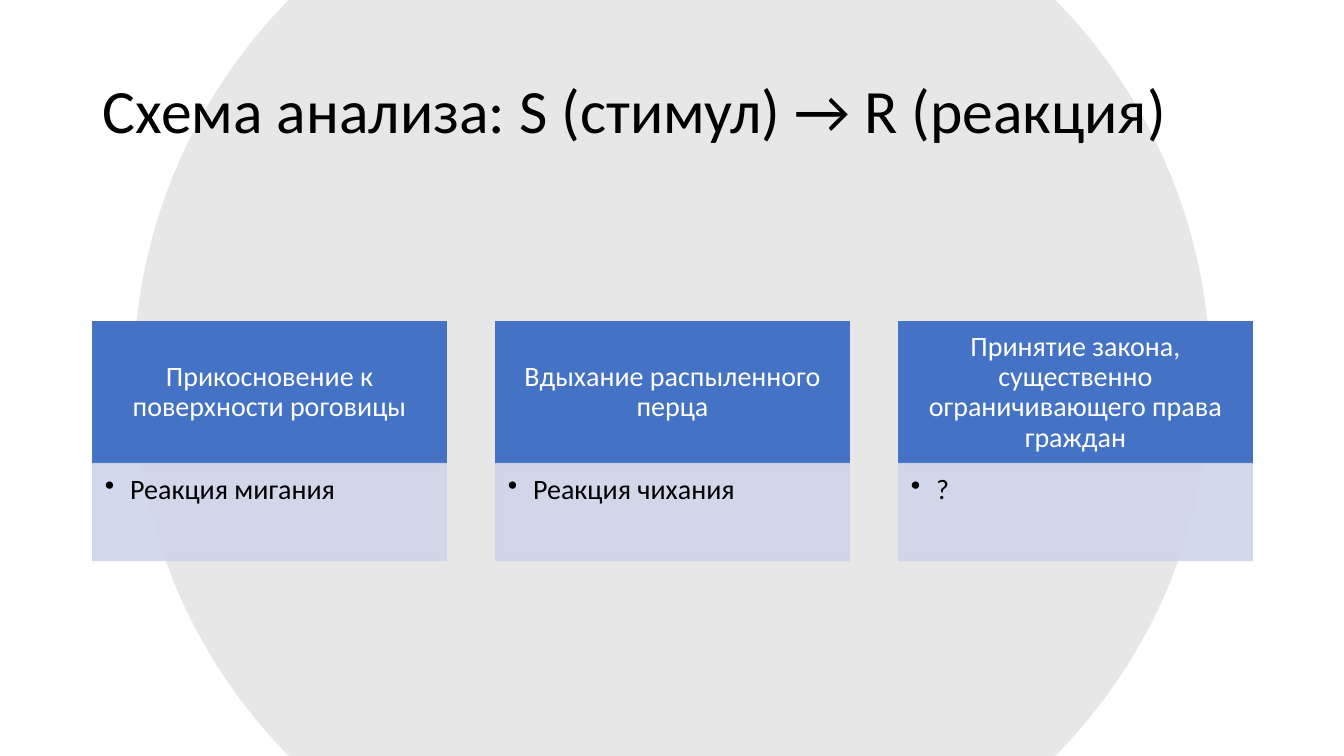
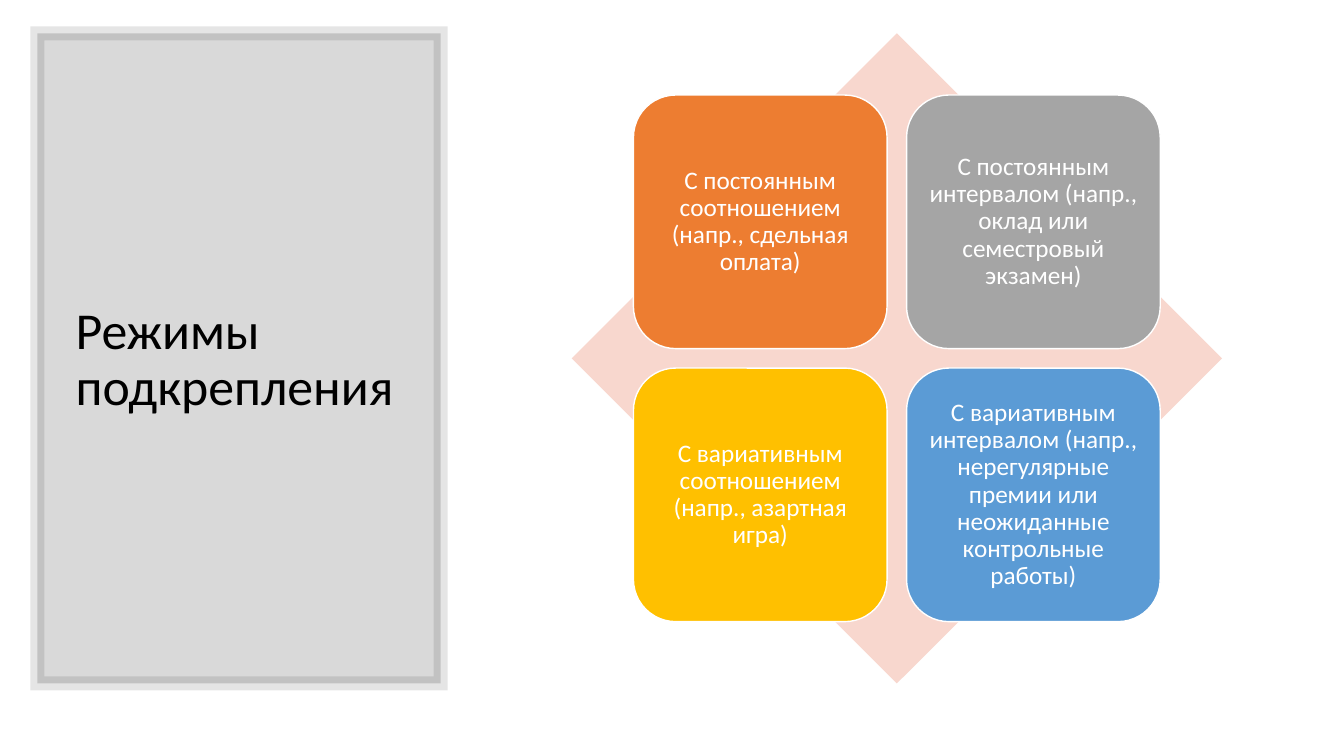
import math
from collections import namedtuple

from lxml import etree
from pptx import Presentation
from pptx.dml.color import RGBColor
from pptx.enum.shapes import MSO_SHAPE
from pptx.enum.text import MSO_ANCHOR, MSO_AUTO_SIZE, PP_ALIGN
from pptx.oxml.ns import qn
from pptx.util import Inches, Pt

RECTANGLE = MSO_SHAPE.RECTANGLE
ROUNDED = MSO_SHAPE.ROUNDED_RECTANGLE
DIAMOND = MSO_SHAPE.DIAMOND
TOP, MIDDLE = MSO_ANCHOR.TOP, MSO_ANCHOR.MIDDLE
LEFT, CENTER = PP_ALIGN.LEFT, PP_ALIGN.CENTER

WIDTH, HEIGHT = 13.33, 7.5
TITLE_ONLY = 5
FONT = "Calibri"
COLORS = {
    "black": "000000",
    "white": "FFFFFF",
    "disc": "D9D9D9",
    "header": "4472C4",
    "answer": "CFD5EA",
    "diamond": "F8D7CE",
    "orange": "ED7D31",
    "gray": "A5A5A5",
    "yellow": "FFC000",
    "blue": "5B9BD5",
}
CARDS = [
    ("Прикосновение к поверхности роговицы", "Реакция мигания"),
    ("Вдыхание распыленного перца", "Реакция чихания"),
    ("Принятие закона, существенно ограничивающего права граждан", "?"),
]
MODES = [
    ("orange", "С постоянным соотношением (напр., сдельная оплата)"),
    ("gray", "С постоянным интервалом (напр., оклад или семестровый экзамен)"),
    ("yellow", "С вариативным соотношением (напр., азартная игра)"),
    ("blue", "С вариативным интервалом (напр., нерегулярные премии или "
             "неожиданные контрольные работы)"),
]

Box = namedtuple("Box", "left top width height")


def paint(fill, color, opacity=100):
    """Make a fill solid, with its opacity in percent."""
    fill.solid()
    fill.fore_color.rgb = RGBColor.from_string(COLORS[color])
    if opacity < 100:
        tone = fill._xPr.find(qn("a:solidFill"))[0]
        etree.SubElement(tone, qn("a:alpha"), val=str(opacity * 1000))


def style(shape, color, opacity=100, line=None, line_width=1, line_opacity=100):
    shape.shadow.inherit = False
    paint(shape.fill, color, opacity)
    if line is None:
        shape.line.fill.background()
        return
    shape.line.width = Pt(line_width)
    paint(shape.line.fill, line, line_opacity)
    outline = shape.element.spPr.find(qn("a:ln"))
    etree.SubElement(outline, qn("a:miter"), lim="800000")


def add_box(page, kind, box, color, **look):
    shape = page.shapes.add_shape(kind, *map(Inches, box))
    style(shape, color, **look)
    return shape


def write(shape, text, size, color, align=CENTER, anchor=MIDDLE,
          insets=(0.1, 0.05, 0.1, 0.05), bullet=False):
    frame = shape.text_frame
    left, top, right, bottom = map(Inches, insets)
    frame_format = {
        "word_wrap": True, "auto_size": MSO_AUTO_SIZE.NONE,
        "vertical_anchor": anchor, "margin_left": left, "margin_top": top,
        "margin_right": right, "margin_bottom": bottom,
    }
    for name, value in frame_format.items():
        setattr(frame, name, value)
    para = frame.paragraphs[0]
    para.alignment = align
    para.line_spacing = 0.9
    span = para.add_run()
    span.text = text
    span.font.name = FONT
    span.font.size = Pt(size)
    span.font.color.rgb = RGBColor.from_string(COLORS[color])
    if bullet:
        properties = para._p.get_or_add_pPr()
        properties.set("marL", str(Inches(0.25)))
        properties.set("indent", str(-Inches(0.25)))
        etree.SubElement(properties, qn("a:buChar"), char="•")


def add_page(deck, title, box, size):
    page = deck.slides.add_slide(deck.slide_layouts[TITLE_ONLY])
    holder = page.shapes.title
    for name, value in zip(Box._fields, box):
        setattr(holder, name, Inches(value))
    write(holder, title, size, "black", align=LEFT)
    return page


def send_behind_title(page, shape):
    page.shapes.title.element.addprevious(shape.element)


def add_disc(page, radius):
    """Draw a centred disc, cut off at the top and bottom of the slide."""
    reach = math.asin(HEIGHT / 2 / radius)
    steps = 60
    points = []
    for middle in (0, math.pi):
        for step in range(steps + 1):
            angle = middle - reach + 2 * reach * step / steps
            points.append((Inches(WIDTH / 2 + radius * math.cos(angle)),
                           Inches(HEIGHT / 2 + radius * math.sin(angle))))
    builder = page.shapes.build_freeform(*points[0])
    builder.add_line_segments(points[1:], close=True)
    disc = builder.convert_to_shape()
    style(disc, "disc", opacity=62)
    send_behind_title(page, disc)


def add_card(page, box, stimulus, reaction):
    header_height = 1.41
    header = Box(box.left, box.top, box.width, header_height)
    answer = Box(box.left, box.top + header_height,
                 box.width, box.height - header_height)
    shape = add_box(page, RECTANGLE, header, "header", line="header")
    write(shape, stimulus, 20, "white", insets=(0.16, 0.09, 0.16, 0.09))
    shape = add_box(page, RECTANGLE, answer, "answer", opacity=90,
                    line="answer", line_opacity=90)
    write(shape, reaction, 20, "black", align=LEFT, anchor=TOP,
          insets=(0.12, 0.12, 0.16, 0.17), bullet=True)


def add_cards(page, box, gap):
    width = (box.width - gap * (len(CARDS) - 1)) / len(CARDS)
    for column, texts in enumerate(CARDS):
        left = box.left + column * (width + gap)
        add_card(page, Box(left, box.top, width, box.height), *texts)


def add_matrix(page, box):
    """Lay four rounded tiles, two by two, over a diamond."""
    add_box(page, DIAMOND, box, "diamond")
    side = 0.39 * box.width
    pitch = 0.42 * box.width
    margin = (box.width - pitch - side) / 2
    for index, (color, text) in enumerate(MODES):
        row, column = divmod(index, 2)
        tile = Box(box.left + margin + column * pitch,
                   box.top + margin + row * pitch, side, side)
        shape = add_box(page, ROUNDED, tile, color, line="white")
        write(shape, text, 18, "white", insets=(0.07,) * 4)


def add_stimulus_slide(deck):
    page = add_page(deck, "Схема анализа: S (стимул) → R (реакция)",
                    Box(0.92, 0.4, 11.5, 1.45), 44)
    add_disc(page, 5.34)
    add_cards(page, Box(0.92, 3.19, 11.5, 2.37), gap=0.49)


def add_modes_slide(deck):
    page = add_page(deck, "Режимы подкрепления",
                    Box(0.65, 0.7, 3.46, 5.75), 37)
    panel = add_box(page, RECTANGLE, Box(0.37, 0.33, 4, 6.45), "black",
                    opacity=15, line="black", line_width=10, line_opacity=10)
    send_behind_title(page, panel)
    add_matrix(page, Box(5.67, 0.33, 6.45, 6.45))


def main():
    deck = Presentation()
    deck.slide_width = Inches(WIDTH)
    deck.slide_height = Inches(HEIGHT)
    add_stimulus_slide(deck)
    add_modes_slide(deck)
    deck.save("out.pptx")


if __name__ == "__main__":
    main()
